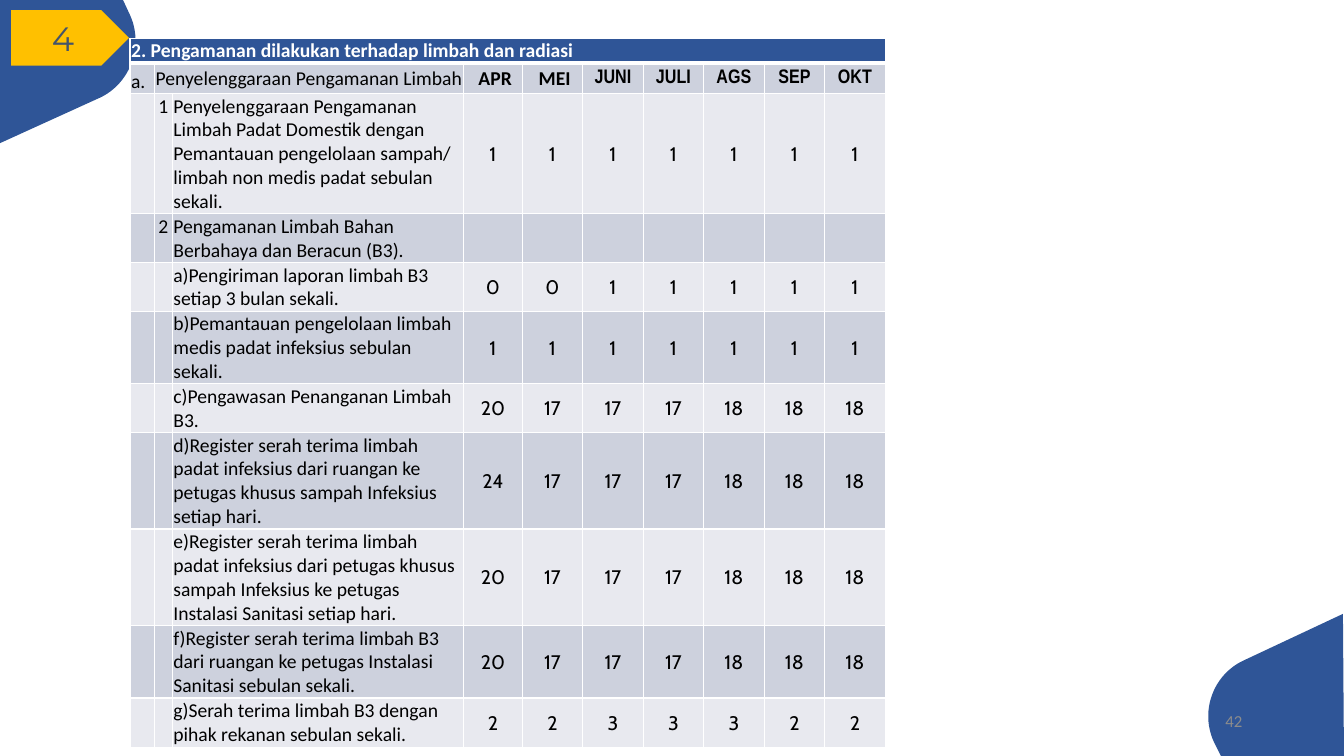
from pptx import Presentation
from pptx.dml.color import RGBColor
from pptx.enum.shapes import MSO_SHAPE as Shape
from pptx.enum.text import MSO_ANCHOR as Anchor, PP_ALIGN as Align
from pptx.oxml import parse_xml
from pptx.oxml.ns import nsdecls
from pptx.util import Inches, Pt

COLORS = {
    "navy": "2F5597", "gold": "FFC000", "slate": "44546A", "gray": "8C8C8C",
    "white": "FFFFFF", "black": "000000", "dark_band": "CDD1DD", "light_band": "E8E9EF",
}
COLUMN_WIDTHS = [0.22, 0.18, 2.89, 0.58] + [0.6] * 6
ROW_HEIGHTS = [0.19, 0.3, 0.68] + [0.46] * 4 + [0.68] * 2 + [0.49] * 2
MONTHS = [" APR", " MEI", "JUNI", "JULI", "AGS", "SEP", "OKT"]
ACTIVITIES = [
    ("1", "Penyelenggaraan Pengamanan Limbah Padat Domestik dengan Pemantauan "
          "pengelolaan sampah/ limbah non medis padat sebulan sekali.", [1] * 7),
    ("2", "Pengamanan Limbah Bahan Berbahaya dan Beracun (B3).", [""] * 7),
    ("", "a)Pengiriman laporan limbah B3 setiap 3 bulan sekali.", [0, 0, 1, 1, 1, 1, 1]),
    ("", "b)Pemantauan pengelolaan limbah medis padat infeksius sebulan sekali.", [1] * 7),
    ("", "c)Pengawasan Penanganan Limbah B3.", [20, 17, 17, 17, 18, 18, 18]),
    ("", "d)Register serah terima limbah padat infeksius dari ruangan ke petugas khusus "
         "sampah Infeksius setiap hari.", [24, 17, 17, 17, 18, 18, 18]),
    ("", "e)Register serah terima limbah padat infeksius dari petugas khusus sampah "
         "Infeksius ke petugas Instalasi Sanitasi setiap hari.", [20, 17, 17, 17, 18, 18, 18]),
    ("", "f)Register serah terima limbah B3 dari ruangan ke petugas Instalasi Sanitasi "
         "sebulan sekali.", [20, 17, 17, 17, 18, 18, 18]),
    ("", "g)Serah terima limbah B3 dengan pihak rekanan sebulan sekali.", [2, 2, 3, 3, 3, 2, 2]),
]
BOTTOM_CORNER = [
    [(13.33, 7.5)], [(12.11, 7.5)], [(12.04, 7.36)],
    [(11.9, 7.06), (12.03, 6.69), (12.34, 6.55)], [(13.32, 6.09)],
]
TOP_CORNER = [
    [(0, 0)], [(1.22, 0)], [(1.29, 0.15)],
    [(1.43, 0.46), (1.29, 0.83), (0.99, 0.97)], [(0, 1.42)],
]


def curve_points(start, control_1, control_2, end, steps=24):
    """Return points along a cubic curve, leaving out its start."""
    points = []
    for step in range(1, steps + 1):
        t = step / steps
        weights = ((1 - t) ** 3, 3 * t * (1 - t) ** 2, 3 * t * t * (1 - t), t ** 3)
        corners = (start, control_1, control_2, end)
        points.append(tuple(sum(w * c[axis] for w, c in zip(weights, corners)) for axis in (0, 1)))
    return points


class SlideBuilder:
    """Draw styled elements on one slide."""

    def __init__(self, slide):
        self.slide = slide

    def color(self, name):
        """Return the named palette colour."""
        return RGBColor.from_string(COLORS[name])

    def paint(self, shape, fill):
        """Give a shape a plain fill without line or shadow."""
        shape.shadow.inherit = False
        shape.fill.solid()
        shape.fill.fore_color.rgb = self.color(fill)
        shape.line.fill.background()

    def set_text(self, frame, text, size, font, color, align=Align.LEFT, bold=False):
        """Set the text of a frame and format its run."""
        frame.text = text
        paragraph = frame.paragraphs[0]
        paragraph.alignment = align
        for run in paragraph.runs:
            run.font.size = Pt(size)
            run.font.name = font
            run.font.bold = bold
            run.font.color.rgb = self.color(color)

    def corner(self, segments):
        """Draw a rounded corner ornament."""
        points = list(segments[0])
        for segment in segments[1:]:
            points += curve_points(points[-1], *segment) if len(segment) == 3 else segment
        outline = [(Inches(x), Inches(y)) for x, y in points]
        builder = self.slide.shapes.build_freeform(*outline[0], scale=1.0)
        builder.add_line_segments(outline[1:], close=True)
        self.paint(builder.convert_to_shape(), "navy")

    def badge(self, text, left, top, width, height):
        """Draw a pentagon tag holding a number."""
        tag = self.slide.shapes.add_shape(
            Shape.PENTAGON, Inches(left), Inches(top), Inches(width), Inches(height))
        self.paint(tag, "gold")
        tag.text_frame.vertical_anchor = Anchor.MIDDLE
        self.set_text(tag.text_frame, text, 24.1, "Montserrat", "slate", Align.CENTER)

    def label(self, text, left, top, width, height):
        """Add a right-aligned small text box."""
        frame = self.slide.shapes.add_textbox(
            Inches(left), Inches(top), Inches(width), Inches(height)).text_frame
        frame.word_wrap = True
        frame.vertical_anchor = Anchor.MIDDLE
        self.set_text(frame, text, 12, "Calibri", "gray", Align.RIGHT)

    def table(self, left, top, widths, heights):
        """Add a table with banded fills and white borders."""
        grid = self.slide.shapes.add_table(
            len(heights), len(widths), Inches(left), Inches(top),
            Inches(sum(widths)), Inches(sum(heights))).table
        for column, width in zip(grid.columns, widths):
            column.width = Inches(width)
        for index, (row, height) in enumerate(zip(grid.rows, heights)):
            row.height = Inches(height)
            fill = "navy" if index == 0 else "dark_band" if index % 2 else "light_band"
            for cell in row.cells:
                self.borders(cell, top=3 if index == 1 else 1, bottom=3 if index == 0 else 1)
                cell.fill.solid()
                cell.fill.fore_color.rgb = self.color(fill)
        return grid

    def borders(self, cell, top, bottom):
        """Draw the four white borders of a cell."""
        properties = cell._tc.get_or_add_tcPr()
        for side, width in (("L", 1), ("R", 1), ("T", top), ("B", bottom)):
            properties.append(parse_xml(
                f'<a:ln{side} {nsdecls("a")} w="{Pt(width)}"><a:solidFill>'
                f'<a:srgbClr val="{COLORS["white"]}"/></a:solidFill></a:ln{side}>'))

    def cell(self, cell, text, font="Calibri", color="black", align=Align.LEFT,
             anchor=Anchor.TOP, bold=False):
        """Fill a table cell with text and tight margins."""
        cell.margin_left = cell.margin_right = cell.margin_top = Inches(0.01)
        cell.margin_bottom = 0
        cell.vertical_anchor = anchor
        self.set_text(cell.text_frame, text, 14, font, color, align, bold)


def main():
    """Build and save the slide."""
    deck = Presentation()
    deck.slide_width, deck.slide_height = Inches(13.33), Inches(7.5)
    page = SlideBuilder(deck.slides.add_slide(deck.slide_layouts[6]))
    page.corner(BOTTOM_CORNER)
    page.corner(TOP_CORNER)
    page.badge("4", 0.11, 0.1, 1.17, 0.55)

    report = page.table(1.29, 0.38, COLUMN_WIDTHS, ROW_HEIGHTS)
    report.cell(0, 0).merge(report.cell(0, len(COLUMN_WIDTHS) - 1))
    report.cell(1, 1).merge(report.cell(1, 2))
    centered = {"align": Align.CENTER, "anchor": Anchor.MIDDLE}
    page.cell(report.cell(0, 0), "2. Pengamanan dilakukan terhadap limbah dan radiasi",
              color="white", anchor=Anchor.BOTTOM, bold=True)
    page.cell(report.cell(1, 0), "a.", anchor=Anchor.BOTTOM)
    page.cell(report.cell(1, 1), "Penyelenggaraan Pengamanan Limbah", **centered)
    for column, month in enumerate(MONTHS, start=3):
        font = "Calibri" if column < 5 else "Arial Narrow"
        page.cell(report.cell(1, column), month, font, bold=True, **centered)
    for row, (number, activity, counts) in enumerate(ACTIVITIES, start=2):
        page.cell(report.cell(row, 1), number, align=Align.CENTER)
        page.cell(report.cell(row, 2), activity)
        for column, count in enumerate(counts, start=3):
            page.cell(report.cell(row, column), str(count), "Cabin", **centered)

    page.label("42", 9.42, 6.95, 3, 0.4)
    deck.save("out.pptx")


if __name__ == "__main__":
    main()
